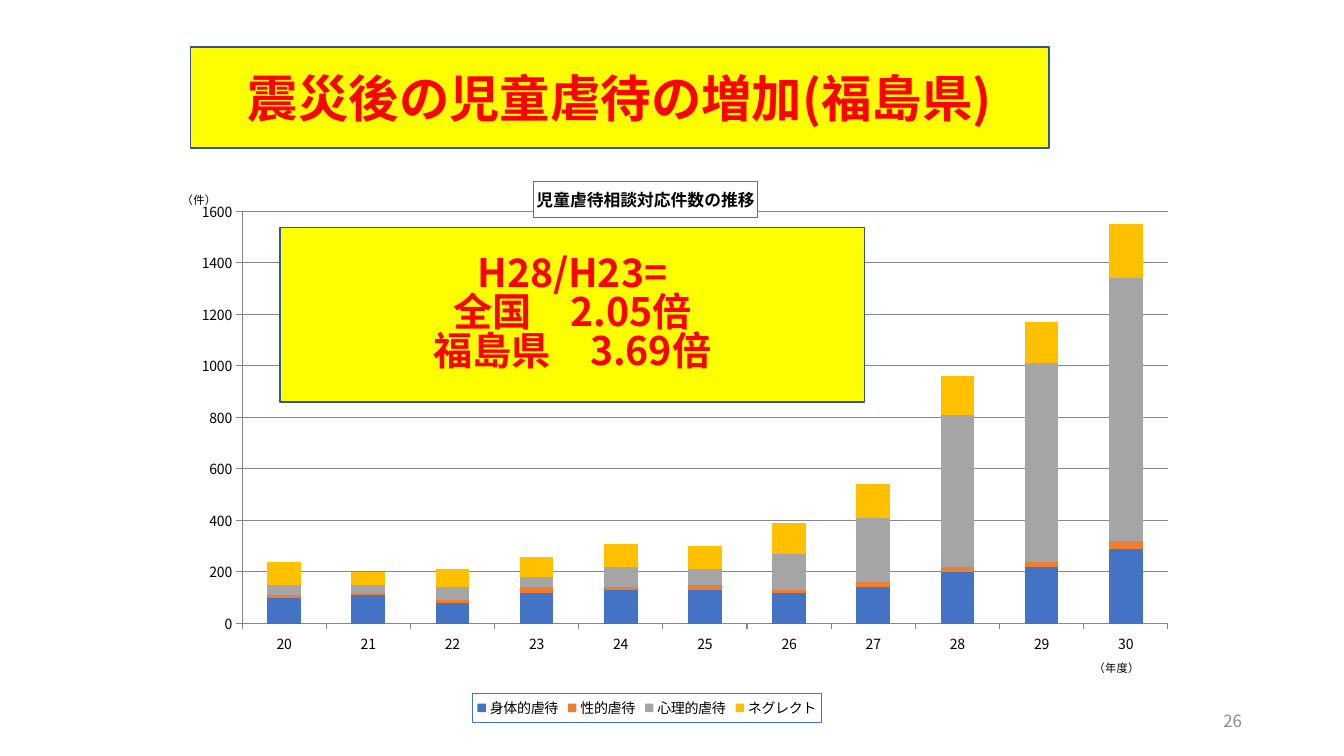
import lxml.etree
import pptx
import pptx.chart.data
import pptx.dml.color
import pptx.enum.chart
import pptx.enum.shapes
import pptx.enum.text
import pptx.oxml
import pptx.oxml.ns
import pptx.util
from pptx.util import Cm, Pt

RGBColor = pptx.dml.color.RGBColor
BLACK = RGBColor(0x00, 0x00, 0x00)
WHITE = RGBColor(0xFF, 0xFF, 0xFF)
RED = RGBColor(0xFF, 0x00, 0x00)
YELLOW = RGBColor(0xFF, 0xFF, 0x00)
BOX_LINE = RGBColor(0x32, 0x54, 0x91)
BLUE = RGBColor(0x44, 0x72, 0xC4)
ORANGE = RGBColor(0xED, 0x7D, 0x31)
GRAY = RGBColor(0xA5, 0xA5, 0xA5)
GOLD = RGBColor(0xFF, 0xC0, 0x00)
GRID = RGBColor(0x87, 0x87, 0x87)
NUMBER_GRAY = RGBColor(0x8C, 0x8C, 0x8C)
FONT = "Noto Sans CJK JP"
qn = pptx.oxml.ns.qn


def style_font(font, size, color, bold=False):
    font.size, font.bold, font.name = Pt(size), bold, FONT
    font.color.rgb = color
    lxml.etree.SubElement(font._rPr, qn("a:ea")).set("typeface", FONT)


def place(element, index, **settings):
    """Give a chart part a manual layout, in fractions of the chart."""
    layout = element.find(qn("c:layout"))
    if layout is None:
        layout = lxml.etree.Element(qn("c:layout"))
        element.insert(index, layout)
    manual = lxml.etree.SubElement(layout, qn("c:manualLayout"))
    for tag, value in settings.items():
        lxml.etree.SubElement(manual, qn(f"c:{tag}")).set("val", str(value))


presentation = pptx.Presentation()
presentation.slide_width, presentation.slide_height = Cm(33.87), Cm(19.05)
slide = presentation.slides.add_slide(presentation.slide_layouts[6])

# Stacked column chart
chart_data = pptx.chart.data.CategoryChartData()
chart_data.categories = [str(year) for year in range(20, 31)]
abuse_types = [
    ("身体的虐待", BLUE, (100, 110, 80, 120, 130, 130, 120, 140, 200, 220, 290)),
    ("性的虐待", ORANGE, (10, 10, 10, 20, 10, 20, 10, 20, 20, 20, 30)),
    ("心理的虐待", GRAY, (40, 30, 50, 40, 80, 60, 140, 250, 590, 770, 1020)),
    ("ネグレクト", GOLD, (90, 50, 70, 80, 90, 90, 120, 130, 150, 160, 210)),
]
for name, color, values in abuse_types:
    chart_data.add_series(name, values)
chart = slide.shapes.add_chart(
    pptx.enum.chart.XL_CHART_TYPE.COLUMN_STACKED,
    Cm(2.74), Cm(4.19), Cm(27.1), Cm(14.02), chart_data).chart
style_font(chart.font, 10, BLACK)
plot = chart.plots[0]
plot.gap_width, plot.overlap, plot.vary_by_categories = 150, 100, False
for series, (name, color, values) in zip(plot.series, abuse_types):
    series.format.fill.solid()
    series.format.fill.fore_color.rgb = color
place(chart._chartSpace.chart.plotArea, 0, layoutTarget="inner",
      xMode="edge", yMode="edge", x=0.124, y=0.081, w=0.861, h=0.741)

# Axes
value_axis, category_axis = chart.value_axis, chart.category_axis
value_axis.minimum_scale, value_axis.maximum_scale = 0, 1600
value_axis.major_unit = 200
value_axis.has_major_gridlines = True
for line in (value_axis.major_gridlines.format.line,
             value_axis.format.line, category_axis.format.line):
    line.color.rgb = GRID
    line.width = Pt(0.75)
for axis in (value_axis, category_axis):
    axis.major_tick_mark = pptx.enum.chart.XL_TICK_MARK.OUTSIDE
    axis.minor_tick_mark = pptx.enum.chart.XL_TICK_MARK.NONE

# Chart title and axis titles
chart.has_title = True
for title, text, size, bold, x, y in (
        (chart.chart_title, "児童虐待相談対応件数の推移", 12, True, 0.395, 0.028),
        (value_axis.axis_title, "（件）", 8, False, 0.066, 0.038),
        (category_axis.axis_title, "（年度）", 8, False, 0.914, 0.88)):
    title.text_frame.text = text
    style_font(title.text_frame.paragraphs[0].runs[0].font, size, BLACK, bold)
    title.text_frame._txBody.bodyPr.set("rot", "0")
    title.text_frame._txBody.bodyPr.set("vert", "horz")
    place(title._element, 1, xMode="edge", yMode="edge", x=x, y=y)
title_format = chart.chart_title.format
title_format.fill.solid()
title_format.fill.fore_color.rgb = WHITE
title_format.line.color.rgb = BLUE
title_format.line.width = Pt(0.75)

# Legend with a border
chart.has_legend = True
legend = chart.legend
legend.position = pptx.enum.chart.XL_LEGEND_POSITION.BOTTOM
legend.include_in_layout = False
style_font(legend.font, 10, BLACK)
place(legend._element, 1, xMode="edge", yMode="edge",
      x=0.338, y=0.948, w=0.325, h=0.051)
legend._element.find(qn("c:overlay")).addnext(pptx.oxml.parse_xml(
    f'<c:spPr {pptx.oxml.ns.nsdecls("c", "a")}><a:ln w="9525"><a:solidFill>'
    f'<a:srgbClr val="{BLUE}"/></a:solidFill></a:ln></c:spPr>'))

# Yellow boxes: ratio and slide title
for left, top, width, height, size, spacing, text in (
        (7.06, 5.74, 14.73, 4.39, 28, 0.83,
         "H28/H23=\n全国\u30002.05倍\n福島県\u30003.69倍".replace("\u3000", "　")),
        (4.8, 1.19, 21.64, 2.54, 36, 1.0, "震災後の児童虐待の増加(福島県)")):
    shape = slide.shapes.add_shape(
        pptx.enum.shapes.MSO_SHAPE.RECTANGLE,
        Cm(left), Cm(top), Cm(width), Cm(height))
    shape.shadow.inherit = False
    shape.fill.solid()
    shape.fill.fore_color.rgb = YELLOW
    shape.line.color.rgb = BOX_LINE
    shape.line.width = Pt(1)
    shape.text_frame.text = text
    shape.text_frame.word_wrap = True
    shape.text_frame.vertical_anchor = pptx.enum.text.MSO_ANCHOR.MIDDLE
    for paragraph in shape.text_frame.paragraphs:
        paragraph.alignment = pptx.enum.text.PP_ALIGN.CENTER
        paragraph.line_spacing = spacing
        style_font(paragraph.runs[0].font, size, RED, True)

# Slide number
number_box = slide.shapes.add_textbox(Cm(23.93), Cm(17.65), Cm(7.62), Cm(1.02))
number_box.text_frame.text = "26"
number_box.text_frame.word_wrap = True
number_box.text_frame.vertical_anchor = pptx.enum.text.MSO_ANCHOR.MIDDLE
paragraph = number_box.text_frame.paragraphs[0]
paragraph.alignment = pptx.enum.text.PP_ALIGN.RIGHT
style_font(paragraph.runs[0].font, 12, NUMBER_GRAY)

presentation.save("out.pptx")
